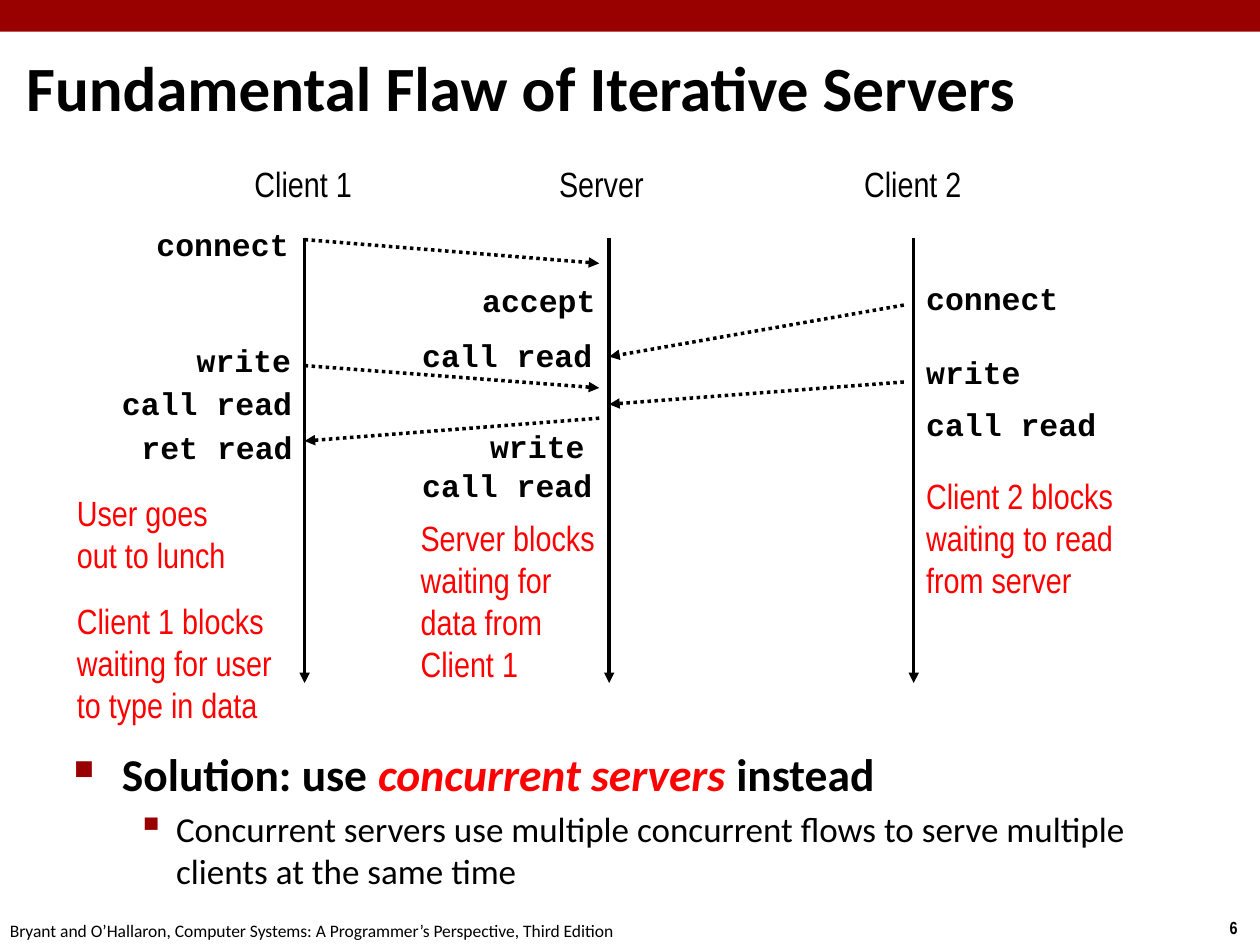
"""Build a slide on the fundamental flaw of iterative servers."""
from dataclasses import dataclass

from lxml import etree
from pptx import Presentation
from pptx.dml.color import RGBColor
from pptx.enum.dml import MSO_LINE
from pptx.enum.shapes import MSO_CONNECTOR, MSO_SHAPE
from pptx.enum.text import MSO_ANCHOR, PP_ALIGN
from pptx.oxml.ns import qn
from pptx.util import Cm, Pt

STRAIGHT = MSO_CONNECTOR.STRAIGHT
RECT = MSO_SHAPE.RECTANGLE
DOTTED = MSO_LINE.ROUND_DOT
MIDDLE = MSO_ANCHOR.MIDDLE
LEFT, RIGHT = PP_ALIGN.LEFT, PP_ALIGN.RIGHT


@dataclass(frozen=True)
class Theme:
    black: RGBColor = RGBColor(0, 0, 0)
    red: RGBColor = RGBColor(0xFF, 0, 0)
    band: RGBColor = RGBColor(0x99, 0, 0)
    body_font: str = "Calibri"
    label_font: str = "Arial Narrow"
    code_font: str = "Courier New"
    title: int = 36
    solution: int = 26
    label: int = 20
    code: int = 18
    footer: int = 10
    line: int = 2


THEME = Theme()
LANE = 6.14
GAP = 0.2
CLIENT1, SERVER, CLIENT2 = LANE, 2 * LANE, 3 * LANE

HEADINGS = [("Client 1", 4.88, 2.49), ("Server", 11.02, 2.24), ("Client 2", 17.17, 2.49)]
CALLS = [
    ("connect", 2.87, 4.42, 3.2, RIGHT),
    ("write", 3.68, 6.76, 2.44, RIGHT),
    ("call read", 2.18, 7.62, 3.96, RIGHT),
    ("ret read", 2.57, 8.51, 3.58, RIGHT),
    ("accept", 9.47, 5.54, 2.82, LEFT),
    ("call read", 8.26, 6.65, 3.99, LEFT),
    ("write", 9.63, 8.48, 2.44, LEFT),
    ("call read", 8.26, 9.27, 3.96, LEFT),
    ("connect", CLIENT2, 5.51, 3.2, LEFT),
    ("write", CLIENT2, 6.99, 2.44, LEFT),
    ("call read", CLIENT2, 8.05, 3.96, LEFT),
]
MESSAGES = [
    (CLIENT1, 4.83, SERVER - GAP, 5.31),
    (CLIENT2 - GAP, 6.15, SERVER, 7.19),
    (CLIENT1, 7.37, SERVER - GAP, 7.82),
    (CLIENT2 - GAP, 7.7, SERVER, 8.15),
    (SERVER - GAP, 8.43, CLIENT1, 8.89),
]
NOTES = [
    ("User goes\nout to lunch\nClient 1 blocks\nwaiting for user\nto type in data",
     1.3, 9.78, 4.47, 5.13),
    ("Client 2 blocks\nwaiting to read\nfrom server", CLIENT2, 9.45, 4.32, 2.82),
    ("Server blocks\nwaiting for\ndata from\nClient 1", 8.23, 10.29, 4.06, 3.68),
]


def style_run(r, font, size, color, bold=False, italic=False):
    """Format one run."""
    r.font.name = font
    r.font.size = Pt(size)
    r.font.color.rgb = color
    r.font.bold = bold
    r.font.italic = italic


def add_text(slide, text, box, font, size, color=THEME.black, bold=False,
             align=LEFT, wrap=False):
    """Add a text box in one style and return its text frame."""
    tf = slide.shapes.add_textbox(*map(Cm, box)).text_frame
    tf.word_wrap = wrap
    tf.text = text
    for p in tf.paragraphs:
        p.alignment = align
        for r in p.runs:
            style_run(r, font, size, color, bold)
    return tf


def add_arrow(slide, x1, y1, x2, y2, dash=None):
    """Add a straight line with a triangle at its end."""
    line = slide.shapes.add_connector(STRAIGHT, Cm(x1), Cm(y1), Cm(x2), Cm(y2))
    line.line.color.rgb = THEME.black
    line.line.width = Pt(THEME.line)
    if dash is not None:
        line.line.dash_style = dash
    etree.SubElement(line.line._get_or_add_ln(), qn("a:tailEnd"), type="triangle")
    etree.SubElement(line._element.spPr, qn("a:effectLst"))


def set_bullet(p, char, percent, margin, hanging, before):
    """Give a paragraph a coloured bullet, a hanging indent and space before."""
    p.space_before = Pt(before)
    pPr = p._p.get_or_add_pPr()
    pPr.set("marL", str(Cm(margin)))
    pPr.set("indent", str(-Cm(hanging)))
    color = etree.SubElement(pPr, qn("a:buClr"))
    etree.SubElement(color, qn("a:srgbClr"), val=str(THEME.band))
    etree.SubElement(pPr, qn("a:buSzPct"), val=str(percent * 1000))
    etree.SubElement(pPr, qn("a:buChar"), char=char)


def add_frame(slide):
    """Add the top band, title, footer and page number."""
    sp = slide.shapes.add_shape(RECT, 0, 0, Cm(25.4), Cm(0.64))
    sp.shadow.inherit = False
    sp.fill.solid()
    sp.fill.fore_color.rgb = THEME.band
    sp.line.fill.background()
    tf = add_text(slide, "Fundamental Flaw of Iterative Servers", (0.28, 0.94, 24.97, 1.6),
                  THEME.body_font, THEME.title, bold=True, wrap=True)
    tf.vertical_anchor = MIDDLE
    add_text(slide, "6", (24.54, 18.36, 0.86, 0.69), THEME.label_font, THEME.footer, bold=True)
    add_text(slide, "Bryant and O’Hallaron, Computer Systems: A Programmer’s Perspective, "
             "Third Edition", (-0.05, 18.42, 12.9, 0.69), THEME.body_font, THEME.footer)


def add_sequence(slide):
    """Add the lifelines, messages, calls and notes of the diagram."""
    for text, left, width in HEADINGS:
        add_text(slide, text, (left, 3.15, width, 1.12), THEME.label_font, THEME.label)
    for x in (CLIENT1, SERVER, CLIENT2):
        add_arrow(slide, x, 4.8, x, 13.77)
    for message in MESSAGES:
        add_arrow(slide, *message, dash=DOTTED)
    for text, left, top, width, align in CALLS:
        add_text(slide, text, (left, top, width, 1.02), THEME.code_font, THEME.code,
                 bold=True, align=align)
    frames = [add_text(slide, text, box, THEME.label_font, THEME.label, THEME.red)
              for text, *box in NOTES]
    frames[0].paragraphs[2].space_before = Pt(14)


def add_solution(slide):
    """Add the bulleted solution below the diagram."""
    tf = add_text(slide, "Solution: use ", (1.24, 14.91, 23.52, 3.2),
                  THEME.body_font, THEME.solution, bold=True, wrap=True)
    p = tf.paragraphs[0]
    for text, color, italic in (("concurrent servers ", THEME.red, True),
                                ("instead", THEME.black, False)):
        r = p.add_run()
        r.text = text
        style_run(r, THEME.body_font, THEME.solution, color, True, italic)
    set_bullet(p, "■", 60, 0.97, 0.97, 5)
    p = tf.add_paragraph()
    p.text = ("Concurrent servers use multiple concurrent flows to serve multiple "
              "clients at the same time")
    p.level = 1
    style_run(p.runs[0], THEME.body_font, THEME.label, THEME.black)
    set_bullet(p, "▪", 110, 2.06, 0.79, 4)


def main():
    """Build and save the slide."""
    prs = Presentation()
    prs.slide_width, prs.slide_height = Cm(25.4), Cm(19.05)
    slide = prs.slides.add_slide(prs.slide_layouts[6])
    add_frame(slide)
    add_sequence(slide)
    add_solution(slide)
    prs.save("out.pptx")


if __name__ == "__main__":
    main()
